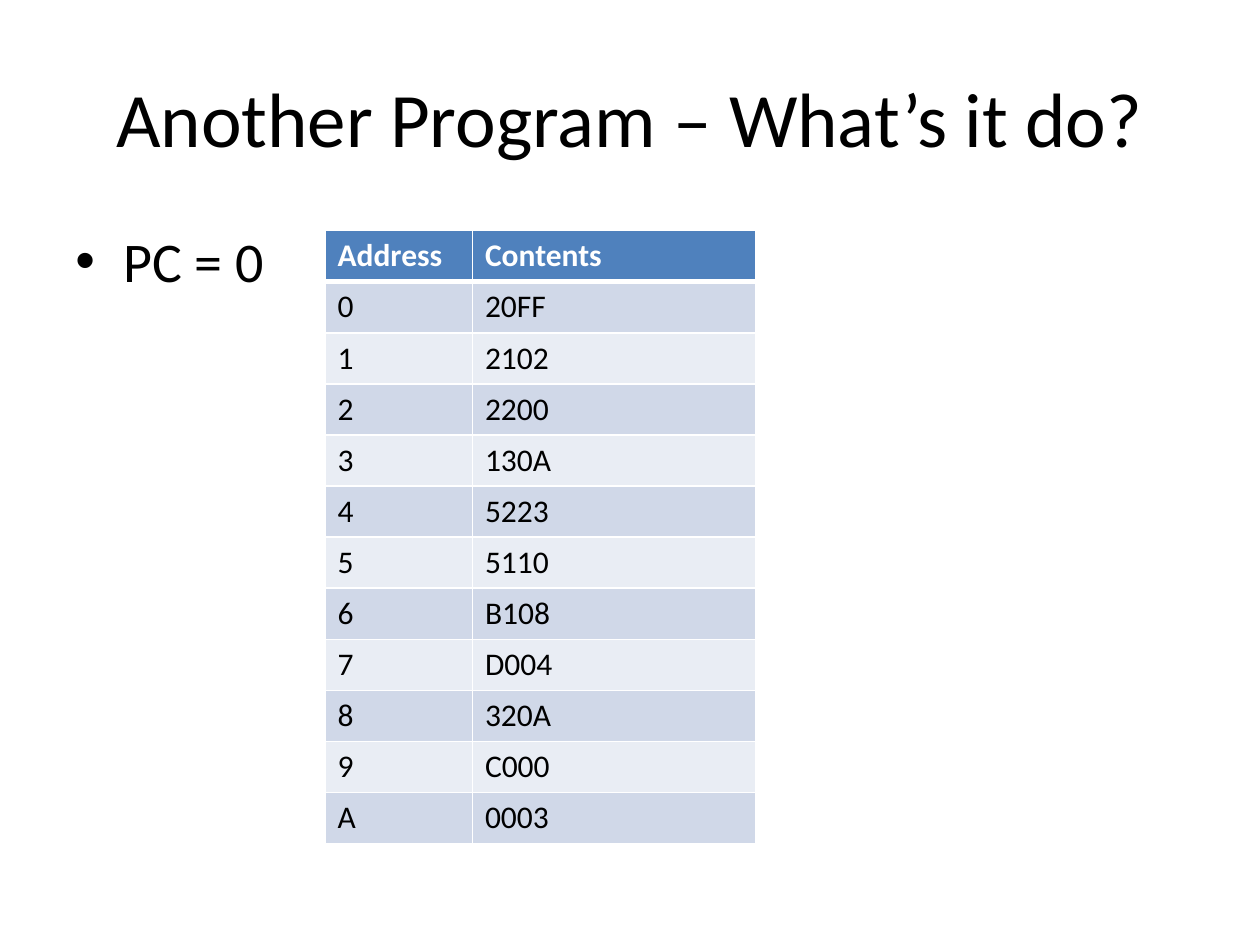
from pptx import Presentation
from pptx.dml.color import RGBColor
from pptx.enum.text import MSO_ANCHOR, PP_ALIGN
from pptx.oxml import parse_xml
from pptx.oxml.ns import nsdecls
from pptx.util import Inches, Pt

WIDTH, HEIGHT = Inches(10), Inches(7.5)


def color(hex_string):
    return RGBColor.from_string(hex_string)


def write(frame, text, size=18, ink="000000", bold=False, align=PP_ALIGN.LEFT, font="Calibri"):
    paragraph = frame.paragraphs[0]
    paragraph.alignment = align
    run = paragraph.add_run()
    run.text = text
    run.font.name, run.font.size, run.font.bold = font, Pt(size), bold
    run.font.color.rgb = color(ink)
    return paragraph


class SlideBuilder:
    """Holds the style and the slide; positions are shares of the slide's size."""
    header_fill, bands, rule = "4F81BD", ("D0D8E8", "E9EDF4"), "FFFFFF"

    def __init__(self, slide):
        self.slide = slide

    def place(self, left, top, width, height):
        return (round(WIDTH * left), round(HEIGHT * top),
                round(WIDTH * width), round(HEIGHT * height))

    def text(self, text, area, anchor=MSO_ANCHOR.TOP, **style):
        frame = self.slide.shapes.add_textbox(*self.place(*area)).text_frame
        frame.word_wrap = True
        frame.vertical_anchor = anchor
        return write(frame, text, **style)

    def bullet(self, text, area, indent=0.38, **style):
        properties = self.text(text, area, **style)._p.get_or_add_pPr()
        properties.set("marL", str(Inches(indent)))
        properties.set("indent", str(-Inches(indent)))
        properties.append(parse_xml(f'<a:buFont {nsdecls("a")} typeface="Arial"/>'))
        properties.append(parse_xml(f'<a:buChar {nsdecls("a")} char="•"/>'))

    def borders(self, cell, **widths):
        properties = cell._tc.get_or_add_tcPr()
        for position, side in enumerate("LRTB"):
            properties.insert(position, parse_xml(
                f'<a:ln{side} {nsdecls("a")} w="{Pt(widths.get(side, 1))}"><a:solidFill>'
                f'<a:srgbClr val="{self.rule}"/></a:solidFill></a:ln{side}>'))

    def table(self, rows, area, column_shares):
        left, top, width, height = self.place(*area)
        table = self.slide.shapes.add_table(
            len(rows), len(column_shares), left, top, width, height).table
        for column, share in zip(table.columns, column_shares):
            column.width = round(width * share)
        for r, values in enumerate(rows):
            table.rows[r].height = round(height / len(rows))
            header = r == 0
            for c, value in enumerate(values):
                cell = table.cell(r, c)
                write(cell.text_frame, value, bold=header,
                      ink="FFFFFF" if header else "000000")
                cell.fill.solid()
                cell.fill.fore_color.rgb = color(
                    self.header_fill if header else self.bands[(r - 1) % 2])
                # A thick rule separates the header from the body
                self.borders(cell, B=3 if header else 1, T=3 if r == 1 else 1)


def main():
    presentation = Presentation()
    presentation.slide_width, presentation.slide_height = WIDTH, HEIGHT
    builder = SlideBuilder(presentation.slides.add_slide(presentation.slide_layouts[6]))

    # Title and starting state
    builder.text("Another Program – What’s it do?", (0.05, 0.04, 0.9, 1 / 6),
                 anchor=MSO_ANCHOR.MIDDLE, size=44, align=PP_ALIGN.CENTER)
    builder.bullet("PC = 0", (0.05, 1.75 / 7.5, 0.9, 0.66), size=32)

    # Memory listing, addressed in hexadecimal
    contents = "20FF 2102 2200 130A 5223 5110 B108 D004 320A C000 0003".split()
    memory = [(f"{address:X}", word) for address, word in enumerate(contents)]
    builder.table([("Address", "Contents")] + memory,
                  (0.258, 1.83 / 7.5, 0.342, 4.87 / 7.5), (1.17 / 3.42, 2.25 / 3.42))

    presentation.save("out.pptx")


if __name__ == "__main__":
    main()
